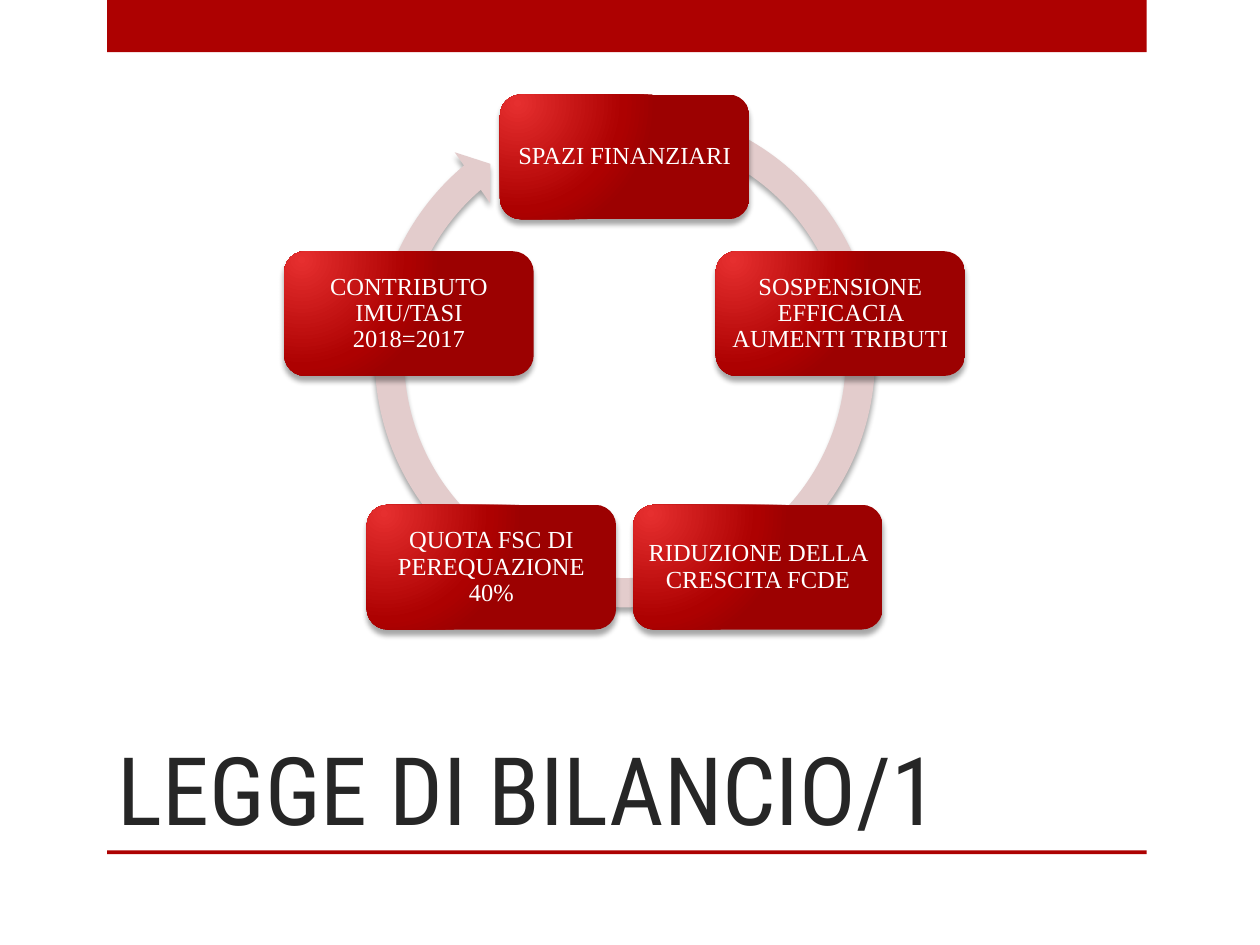
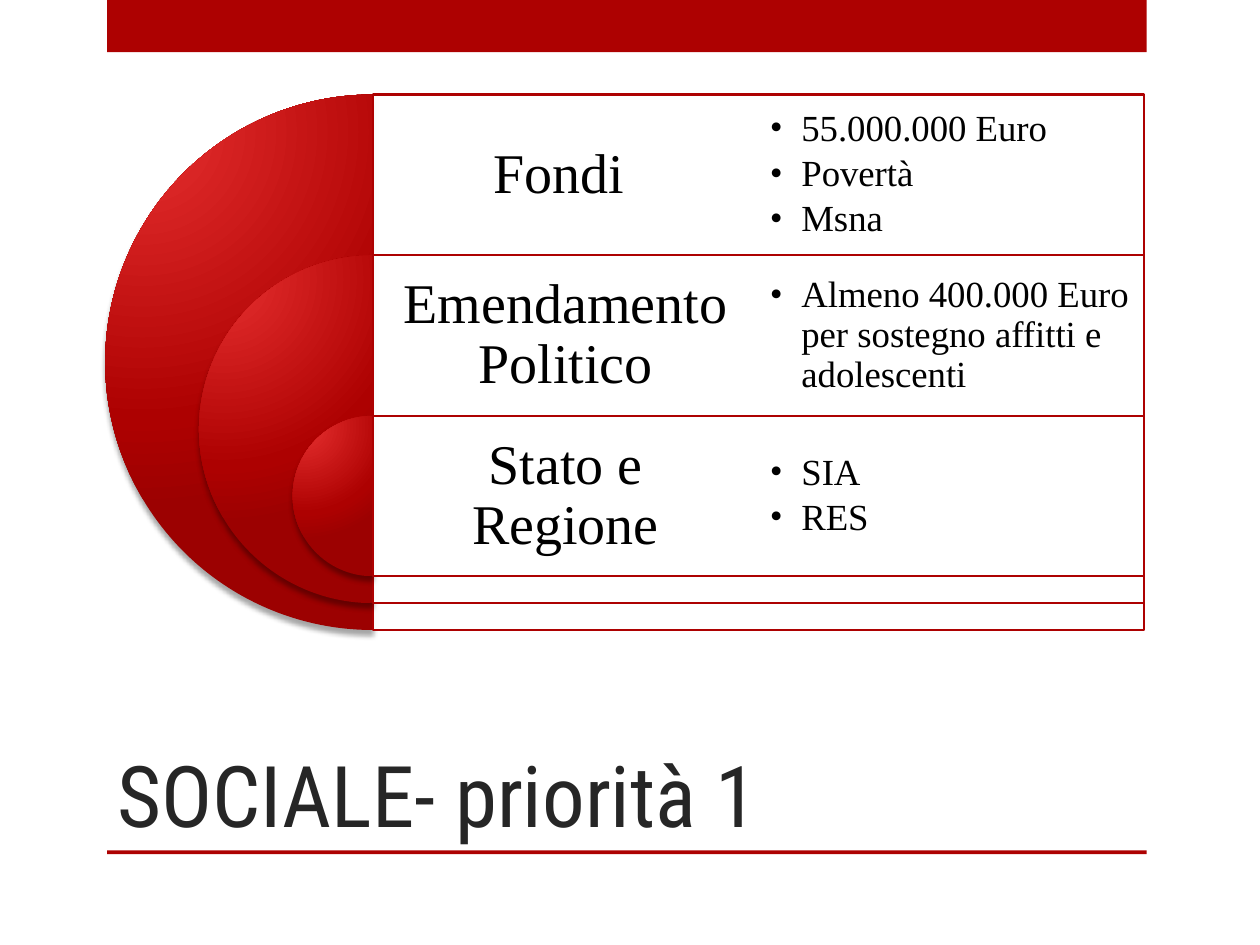
from math import cos, pi, sin

from pptx import Presentation
from pptx.dml.color import RGBColor
from pptx.enum.shapes import MSO_SHAPE
from pptx.enum.text import MSO_ANCHOR, PP_ALIGN
from pptx.oxml import parse_xml
from pptx.oxml.ns import nsdecls, qn
from pptx.util import Inches, Pt

COLORS = {
    "red": "AD0101",
    "light_red": "E62F2F",
    "dark_red": "9C0101",
    "pink": "E3CCCC",
    "title": "262626",
    "white": "FFFFFF",
    "black": "000000",
}
TITLE_FONT = "Roboto Condensed"
BODY_FONT = "Times New Roman"

COLUMNS, ROWS = 100, 75
CELL = Inches(0.1)

BAND_LEFT, BAND_WIDTH = 8.5, 82.5
RULE_TOP = 67.5

CYCLE_CENTER = (49.58, 30.45)
CYCLE_RADIUS = 18
NODE_SIZE = (19.8, 9.9)
CYCLE = [
    "SPAZI FINANZIARI",
    "SOSPENSIONE EFFICACIA AUMENTI TRIBUTI",
    "RIDUZIONE DELLA CRESCITA FCDE",
    "QUOTA FSC DI PEREQUAZIONE 40%",
    "CONTRIBUTO IMU/TASI 2018=2017",
]

TARGET_LEFT, TARGET_TOP = 29.6, 7.5
LABEL_WIDTH, TARGET_ROW = 30.6, 12.75
TARGET_SIZE, TARGET_STEP = 42.5, 14.88
PRIORITIES = [
    ("Fondi ", ["55.000.000 Euro", "Povertà", "Msna"]),
    ("Emendamento Politico",
     ["Almeno 400.000 Euro per sostegno affitti e adolescenti"]),
    ("Stato e Regione", ["SIA", "RES"]),
]


def rgb(name):
    return RGBColor.from_string(COLORS[name])


def grid(*cells):
    return [round(c * CELL) for c in cells]


def add_shape(s, kind, box, fill, line=None):
    sp = s.shapes.add_shape(kind, *grid(*box))
    sp.shadow.inherit = False
    sp.fill.solid()
    sp.fill.fore_color.rgb = rgb(fill)
    if line:
        sp.line.color.rgb = rgb(line)
        sp.line.width = Pt(1.25)
    else:
        sp.line.fill.background()
    return sp


def add_shadow(sp):
    effects = sp._element.spPr.find(qn("a:effectLst"))
    effects.append(parse_xml(
        f'<a:outerShdw {nsdecls("a")} blurRad="{Pt(3)}" dist="{Pt(3)}" dir="5400000" '
        f'rotWithShape="0"><a:srgbClr val="{COLORS["black"]}"><a:alpha val="35000"/>'
        '</a:srgbClr></a:outerShdw>'))


def add_glossy_shape(s, kind, box):
    sp = add_shape(s, kind, box, "red")
    stops = "".join(
        f'<a:gs pos="{pos}000"><a:srgbClr val="{COLORS[name]}"/></a:gs>'
        for pos, name in [(0, "light_red"), (76, "red"), (100, "dark_red")])
    props = sp._element.spPr
    props.replace(props.find(qn("a:solidFill")), parse_xml(
        f'<a:gradFill {nsdecls("a")} rotWithShape="1"><a:gsLst>{stops}</a:gsLst>'
        '<a:path path="circle"><a:fillToRect l="15000" t="15000" r="100000" b="100000"/>'
        '</a:path></a:gradFill>'))
    add_shadow(sp)
    return sp


def add_text_box(s, box):
    return s.shapes.add_textbox(*grid(*box))


def set_text(sp, lines, size, color, font=BODY_FONT, anchor=MSO_ANCHOR.MIDDLE,
             align=PP_ALIGN.CENTER, inset=None, spacing=0.9, bullets=False):
    tf = sp.text_frame
    tf.word_wrap = True
    tf.vertical_anchor = anchor
    if inset is not None:
        tf.margin_left = tf.margin_right = tf.margin_top = tf.margin_bottom = Inches(inset)
    for i, line in enumerate(lines):
        p = tf.add_paragraph() if i else tf.paragraphs[0]
        p.alignment = align
        p.line_spacing = spacing
        if bullets:
            p.space_after = Pt(3.15)
            add_bullet(p)
        r = p.add_run()
        r.text = line
        r.font.size = Pt(size)
        r.font.name = font
        r.font.color.rgb = rgb(color)


def add_bullet(p):
    props = p._p.get_or_add_pPr()
    props.set("marL", str(Inches(0.25)))
    props.set("indent", str(-Inches(0.25)))
    props.append(parse_xml(f'<a:buFont {nsdecls("a")} typeface="{BODY_FONT}"/>'))
    props.append(parse_xml(f'<a:buChar {nsdecls("a")} char="•"/>'))


def add_titled_slide(prs, title, size, top):
    s = prs.slides.add_slide(prs.slide_layouts[6])
    for band_top, height in [(0, 4.15), (RULE_TOP, 0.3)]:
        add_shape(s, MSO_SHAPE.RECTANGLE, (BAND_LEFT, band_top, BAND_WIDTH, height), "red")
    sp = add_text_box(s, (8.35, top, 74.2, RULE_TOP - top))
    set_text(sp, [title], size, "title", font=TITLE_FONT, anchor=MSO_ANCHOR.BOTTOM,
             align=PP_ALIGN.LEFT, spacing=1.0)
    return s


def add_cycle(s, labels):
    arrow = add_shape(s, MSO_SHAPE.CIRCULAR_ARROW, (28.45, 7.2, 42.3, 42.3), "pink")
    for i, value in enumerate([0.055, 3.307, 137.791, 173.84, 0.058]):
        arrow.adjustments[i] = value
    add_shadow(arrow)
    width, height = NODE_SIZE
    for i, label in enumerate(labels):
        angle = 2 * pi * i / len(labels)
        x = CYCLE_CENTER[0] + CYCLE_RADIUS * sin(angle)
        y = CYCLE_CENTER[1] - CYCLE_RADIUS * cos(angle)
        node = add_glossy_shape(s, MSO_SHAPE.ROUNDED_RECTANGLE,
                                (x - width / 2, y - height / 2, width, height))
        set_text(node, [label], 14, "white", inset=0.06)


def add_target_list(s, priorities):
    for i, (label, _) in enumerate(priorities):
        top = TARGET_TOP + i * TARGET_ROW
        size = TARGET_SIZE - i * TARGET_STEP
        pie = add_glossy_shape(s, MSO_SHAPE.PIE, (TARGET_LEFT - size / 2, top, size, size))
        pie.adjustments[0] = 54
        pie.adjustments[1] = 162
        panel = add_shape(s, MSO_SHAPE.RECTANGLE,
                          (TARGET_LEFT, top, 2 * LABEL_WIDTH, size), "white", line="red")
        color = panel._element.spPr.find(qn("a:solidFill"))[0]
        color.append(parse_xml(f'<a:alpha {nsdecls("a")} val="90000"/>'))
        sp = add_text_box(s, (TARGET_LEFT, top, LABEL_WIDTH, TARGET_ROW))
        set_text(sp, [label], 32, "black", inset=0.13)
    for i, (_, details) in enumerate(priorities):
        sp = add_text_box(s, (TARGET_LEFT + LABEL_WIDTH, TARGET_TOP + i * TARGET_ROW,
                              LABEL_WIDTH, TARGET_ROW))
        set_text(sp, details, 21, "black", align=PP_ALIGN.LEFT, inset=0.09, bullets=True)


def main():
    prs = Presentation()
    prs.slide_width, prs.slide_height = grid(COLUMNS, ROWS)
    add_cycle(add_titled_slide(prs, "LEGGE DI BILANCIO/1", 54, 50), CYCLE)
    add_target_list(add_titled_slide(prs, "SOCIALE- priorità 1", 48.6, 58.4), PRIORITIES)
    prs.save("out.pptx")


if __name__ == "__main__":
    main()
